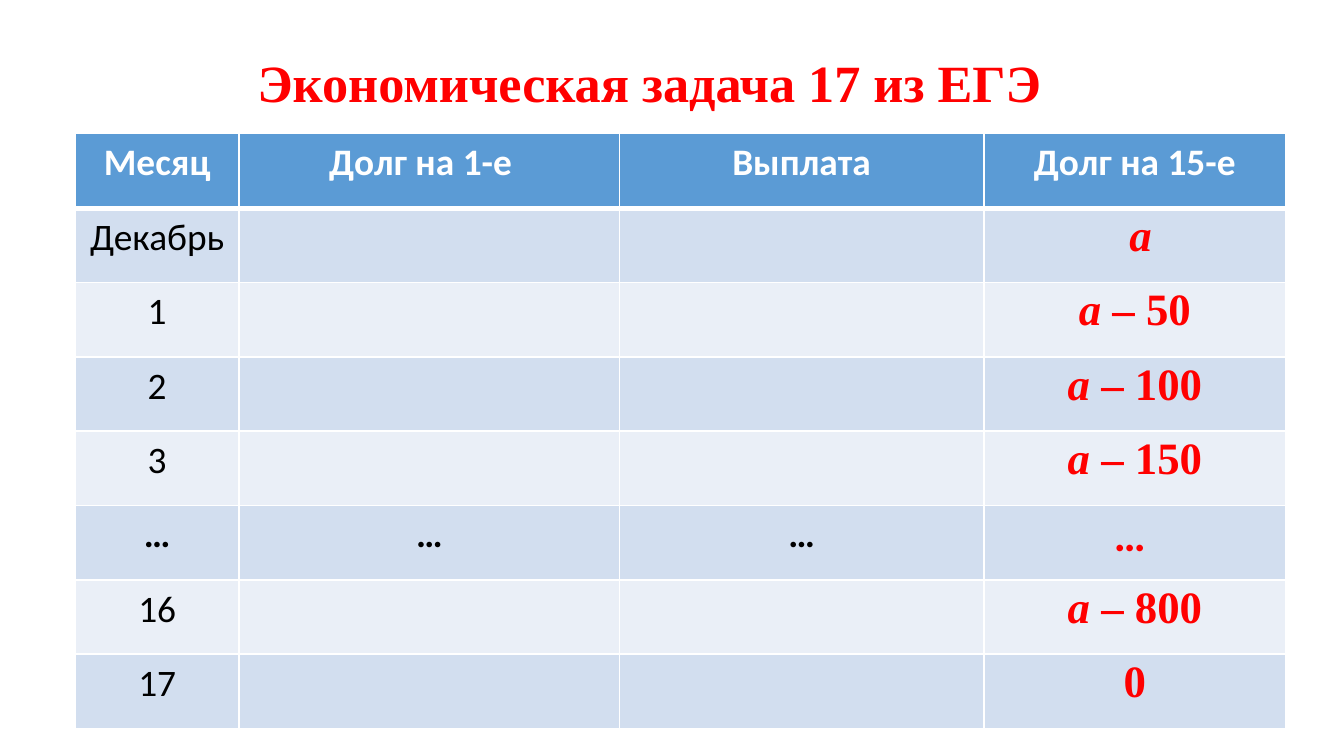
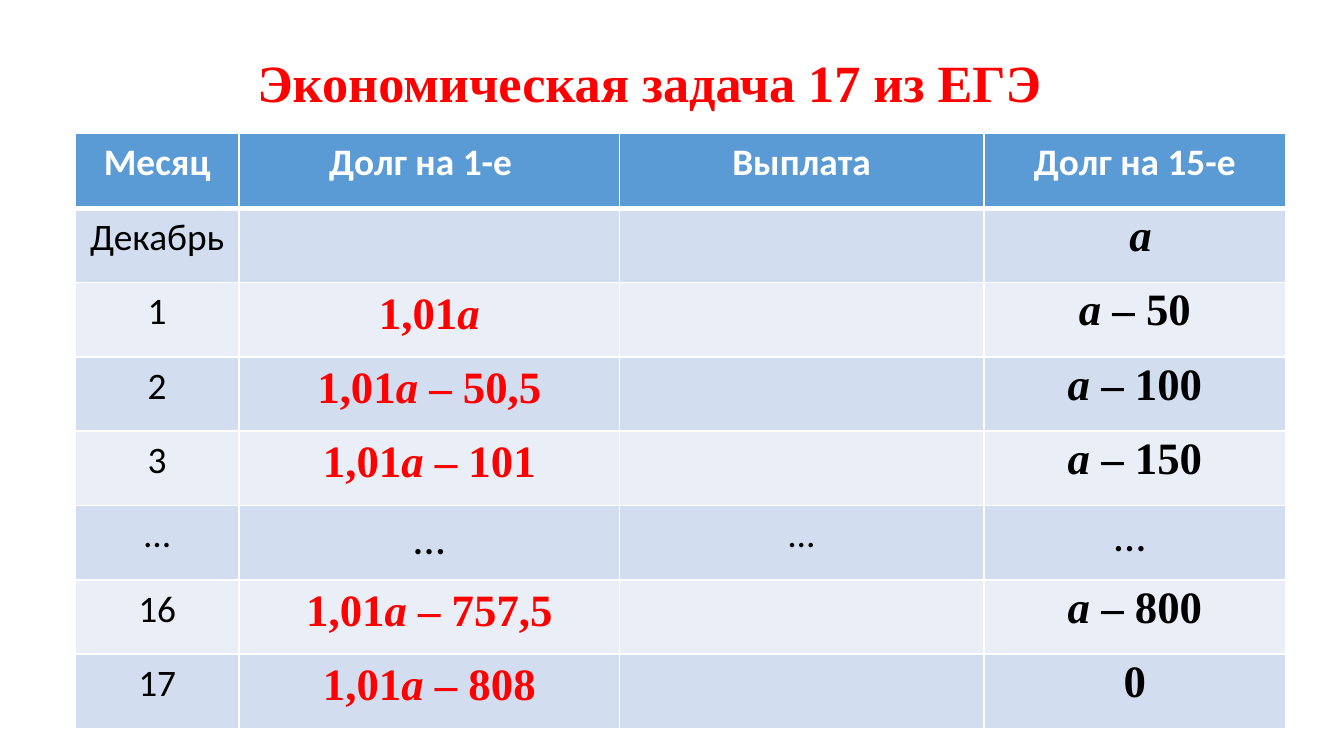
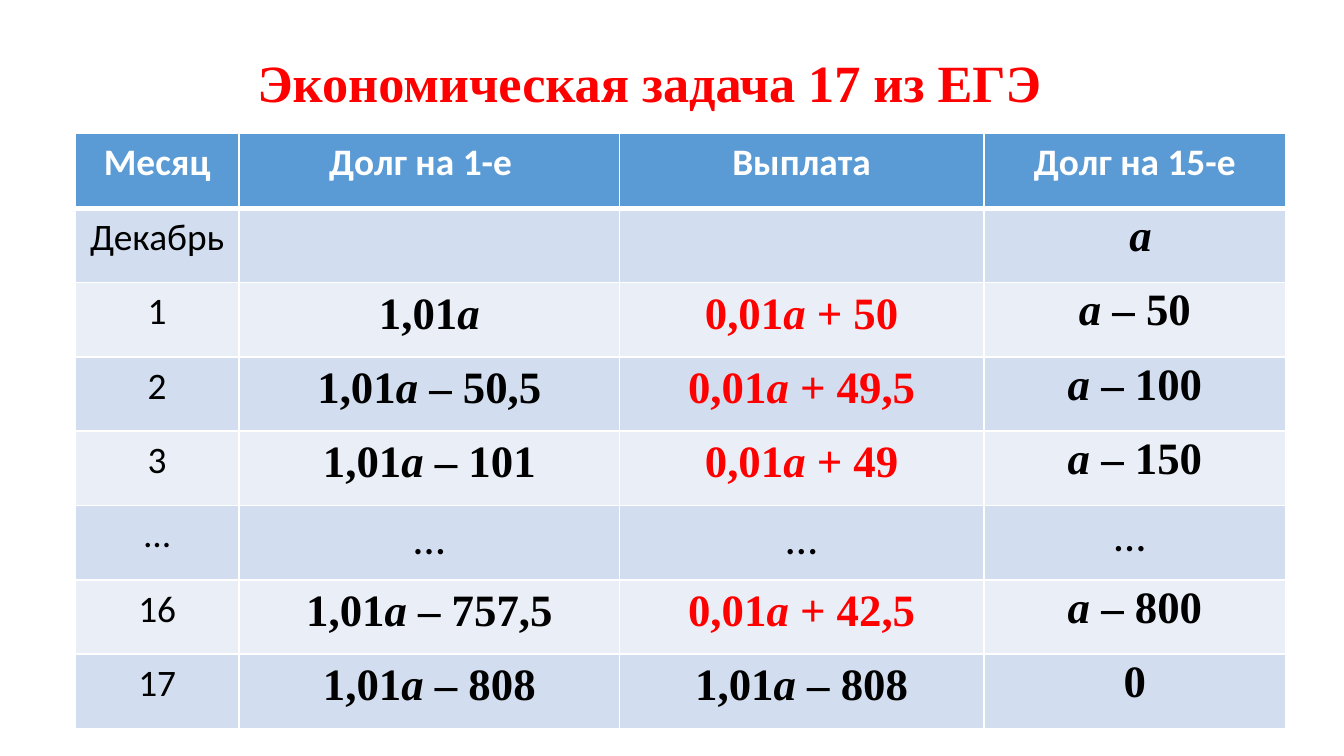
from dataclasses import dataclass

from lxml import etree
from pptx import Presentation
from pptx.dml.color import RGBColor
from pptx.enum.text import MSO_ANCHOR, MSO_AUTO_SIZE, PP_ALIGN
from pptx.oxml.ns import qn
from pptx.util import Inches, Pt

CENTER = PP_ALIGN.CENTER
MIDDLE = MSO_ANCHOR.MIDDLE
NO_AUTOFIT = MSO_AUTO_SIZE.NONE
TITLE_ONLY = 5


@dataclass(frozen=True)
class Theme:
    red: str = "FF0000"
    black: str = "000000"
    white: str = "FFFFFF"
    header: str = "5B9BD5"
    bands: tuple = ("EAEFF7", "D2DEEF")
    sans: str = "Calibri"
    serif: str = "Times New Roman"
    title_size: int = 28
    formula_size: int = 24
    text_size: int = 20


# Table content
TITLE = "Экономическая задача 17 из ЕГЭ"
HEADERS = ["Месяц", "Долг на 1-е", "Выплата", "Долг на 15-е"]
WIDTHS = [1.22, 2.83, 2.71, 2.25]
TABLE_HEIGHT = 4.43
HEADER_HEIGHT = 0.56
DOTS = "…"
MONTHS = ["Декабрь", "1", "2", "3", DOTS, "16", "17"]
DEBT_BEFORE = ["", "1,01a", "1,01a – 50,5", "1,01a – 101", DOTS,
               "1,01a – 757,5", "1,01a – 808"]
PAYMENT = ["", "0,01a + 50", "0,01a + 49,5", "0,01a + 49", DOTS,
           "0,01a + 42,5", "1,01a – 808"]
DEBT_AFTER = [" a", "a – 50", "a – 100", "a – 150", DOTS + " ", "a – 800", "0"]
HIDDEN = [DOTS if m == DOTS else "" for m in MONTHS]


def add_run(p, text, *, font, size, color, bold=False, italic=False):
    r = p.add_run()
    r.text = text
    f = r.font
    f.name, f.size, f.bold, f.italic = font, Pt(size), bold, italic
    f.color.rgb = RGBColor.from_string(color)


def add_formula(p, text, **fmt):
    """Set the variable a in italics and the rest upright."""
    for part in text.partition("a"):
        if part:
            add_run(p, part, italic=part == "a", **fmt)


class Deck:
    def __init__(self, theme):
        self.t = theme
        self.prs = Presentation()
        # 16:9 page
        self.prs.slide_width = Inches(10)
        self.prs.slide_height = Inches(10 * 9 / 16)
        self.s = None

    def slide(self, title):
        self.s = self.prs.slides.add_slide(self.prs.slide_layouts[TITLE_ONLY])
        sp = self.s.shapes.title
        sp.left, sp.top = Inches(0.56), Inches(0.21)
        sp.width, sp.height = Inches(8.54), Inches(0.87)
        tf = sp.text_frame
        tf.auto_size, tf.vertical_anchor = NO_AUTOFIT, MIDDLE
        p = tf.paragraphs[0]
        p.alignment, p.line_spacing = CENTER, Pt(self.t.title_size)
        add_run(p, title, font=self.t.serif, size=self.t.title_size,
                color=self.t.red, bold=True)

    def borders(self, cell, **widths):
        tc_pr = cell._tc.get_or_add_tcPr()
        for i, side in enumerate("LRTB"):
            ln = etree.Element(qn(f"a:ln{side}"), w=str(Pt(widths.get(side, 1))))
            fill = etree.SubElement(ln, qn("a:solidFill"))
            etree.SubElement(fill, qn("a:srgbClr"), val=self.t.white)
            tc_pr.insert(i, ln)

    def cell(self, cell, fill, **widths):
        cell.fill.solid()
        cell.fill.fore_color.rgb = RGBColor.from_string(fill)
        self.borders(cell, **widths)
        p = cell.text_frame.paragraphs[0]
        p.alignment = CENTER
        return p

    def table(self, before, payment, new_column, bold_dots=False):
        """Draw the debt table with the formulas of new_column in red."""
        t = self.t
        columns = [MONTHS, before, payment, DEBT_AFTER]
        rows = len(MONTHS) + 1
        tbl = self.s.shapes.add_table(
            rows, len(columns), Inches(0.56), Inches(0.99),
            Inches(sum(WIDTHS)), Inches(TABLE_HEIGHT)).table
        for col, width in zip(tbl.columns, WIDTHS):
            col.width = Inches(width)
        for row in tbl.rows:
            row.height = Inches((TABLE_HEIGHT - HEADER_HEIGHT) / len(MONTHS))
        tbl.rows[0].height = Inches(HEADER_HEIGHT)

        # Header row
        for c, text in enumerate(HEADERS):
            p = self.cell(tbl.cell(0, c), t.header, B=3)
            add_run(p, text, font=t.sans, size=t.text_size,
                    color=t.white, bold=True)
        tbl.cell(0, 1).margin_right = Inches(0.23)

        # Months and formulas
        last = len(columns) - 1
        for c, column in enumerate(columns):
            for r, text in enumerate(column, start=1):
                cell = tbl.cell(r, c)
                p = self.cell(cell, t.bands[r % 2], T=3 if r == 1 else 1)
                if c == last:
                    cell.margin_left = cell.margin_right = Inches(0.07)
                    cell.margin_top = cell.margin_bottom = 0
                    p.line_spacing = 1.07
                if not text:
                    continue
                dots = text.startswith(DOTS)
                # The final payment equals the debt, so it stays black
                final = column is PAYMENT and r == rows - 1
                red = c == new_column and not final and (not dots or bold_dots)
                color = t.red if red else t.black
                if c == 0 or dots:
                    plain = c == 0 or column is HIDDEN
                    add_run(p, text, font=t.sans, color=color,
                            size=t.text_size if plain else t.formula_size,
                            bold=dots and bold_dots)
                else:
                    add_formula(p, text, font=t.serif, size=t.formula_size,
                                color=color, bold=True)


def main():
    deck = Deck(Theme())
    # Each slide reveals one more column
    steps = [(HIDDEN, HIDDEN, 3, True),
             (DEBT_BEFORE, HIDDEN, 1, False),
             (DEBT_BEFORE, PAYMENT, 2, False)]
    for step in steps:
        deck.slide(TITLE)
        deck.table(*step)
    deck.prs.save("out.pptx")


if __name__ == "__main__":
    main()
